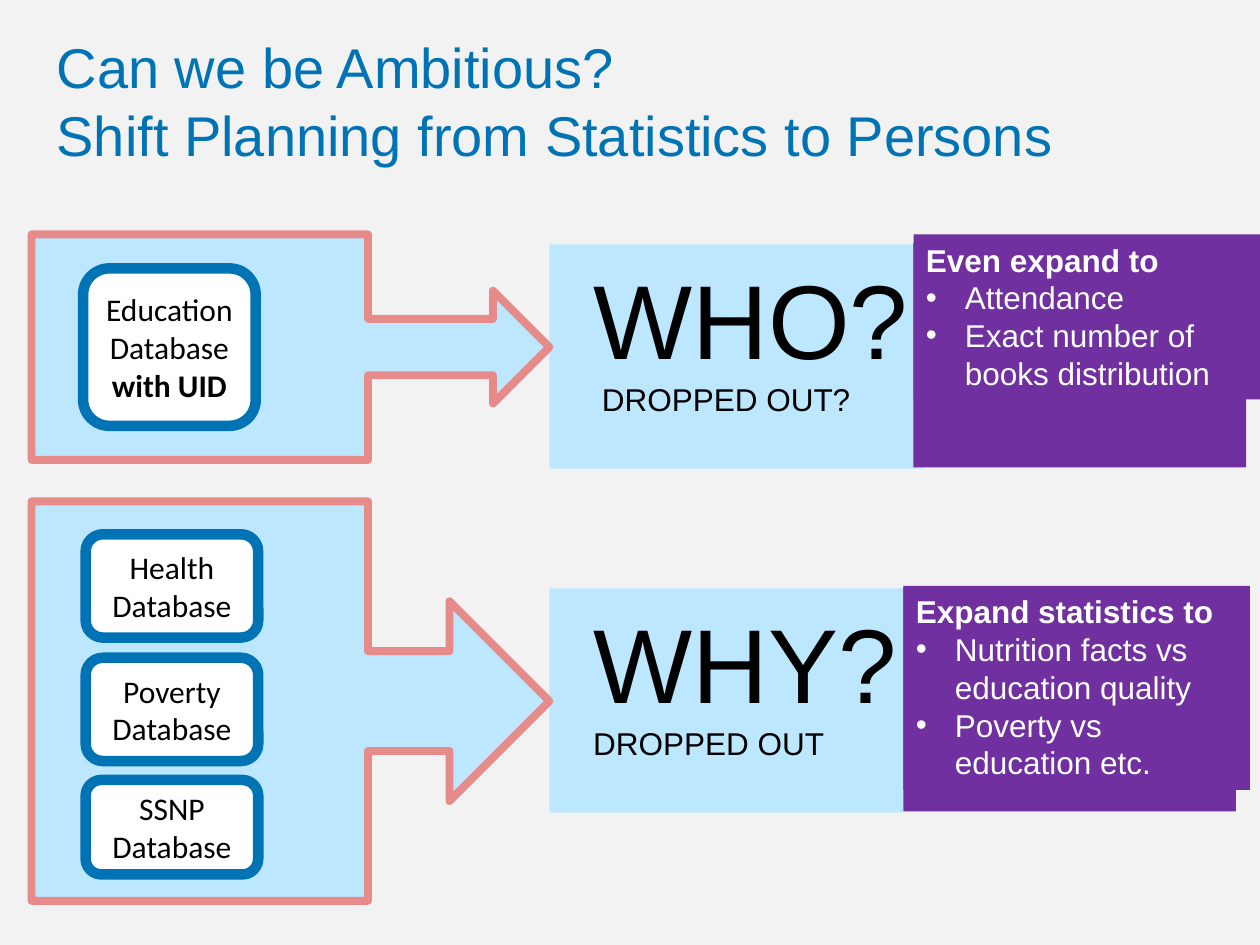
from pptx import Presentation
from pptx.dml.color import RGBColor
from pptx.enum.shapes import MSO_SHAPE
from pptx.enum.text import MSO_ANCHOR, MSO_AUTO_SIZE, PP_ALIGN
from pptx.oxml.ns import qn
from pptx.util import Inches, Pt
from lxml.etree import SubElement

COLORS = {
    "back": "F2F2F2",
    "blue": "0073B5",
    "pale": "BDE7FF",
    "pink": "E68B89",
    "purple": "7030A0",
    "white": "FFFFFF",
    "black": "000000",
}


def rgb(name):
    return RGBColor.from_string(COLORS[name])


def write(para, text, size=18, font="Arial", color="black", bold=False, align=PP_ALIGN.LEFT):
    para.alignment = align
    run = para.add_run()
    run.text = text
    run.font.size = Pt(size)
    run.font.name = font
    run.font.bold = bold
    run.font.color.rgb = rgb(color)


def add_bullet(para):
    props = para._p.get_or_add_pPr()
    props.set("marL", str(Inches(0.31)))
    props.set("indent", str(-Inches(0.31)))
    SubElement(props, qn("a:buFont")).set("typeface", "Arial")
    SubElement(props, qn("a:buChar")).set("char", "•")


class Deck:
    def __init__(self):
        self.show = Presentation()
        self.show.slide_width = Inches(10)
        self.show.slide_height = Inches(7.5)
        self.slide = self.show.slides.add_slide(self.show.slide_layouts[5])
        fill = self.slide.background.fill
        fill.solid()
        fill.fore_color.rgb = rgb("back")

    def title(self, lines, left, top, width, height):
        box = self.slide.shapes.title
        box.left, box.top = Inches(left), Inches(top)
        box.width, box.height = Inches(width), Inches(height)
        frame = box.text_frame
        frame.vertical_anchor = MSO_ANCHOR.MIDDLE
        para = frame.paragraphs[0]
        for i, line in enumerate(lines):
            if i:
                para.add_line_break()
            write(para, line, size=32, color="blue")

    def shape(self, kind, place, fill, line=None, weight=0, home=None):
        shapes = (home or self.slide).shapes
        item = shapes.add_shape(kind, *map(Inches, place))
        item.shadow.inherit = False
        item.fill.solid()
        item.fill.fore_color.rgb = rgb(fill)
        if line:
            item.line.color.rgb = rgb(line)
            item.line.width = Pt(weight)
        else:
            item.line.fill.background()
        return item

    def panel(self, *place):
        self.shape(MSO_SHAPE.RECTANGLE, place, "pale")

    def callout(self, left, top, width, height):
        place = (left + (width - height) / 2, top + (height - width) / 2, height, width)
        item = self.shape(MSO_SHAPE.UP_ARROW_CALLOUT, place, "pale", "pink", 4.5)
        item.rotation = 90

    def text(self, paras, *place):
        frame = self.slide.shapes.add_textbox(*map(Inches, place)).text_frame
        frame.word_wrap = True
        frame.auto_size = MSO_AUTO_SIZE.SHAPE_TO_FIT_TEXT
        for i, runs in enumerate(paras):
            para = frame.add_paragraph() if i else frame.paragraphs[0]
            for text, size in runs:
                write(para, text, size=size)

    def store(self, text, *place, strong=None):
        item = self.shape(MSO_SHAPE.ROUNDED_RECTANGLE, place, "white", "blue", 6)
        frame = item.text_frame
        frame.vertical_anchor = MSO_ANCHOR.MIDDLE
        para = frame.paragraphs[0]
        write(para, text, font="Calibri", align=PP_ALIGN.CENTER)
        if strong:
            write(para, strong, font="Calibri", bold=True, align=PP_ALIGN.CENTER)

    def note(self, head, items, back, front):
        group = self.slide.shapes.add_group_shape()
        self.shape(MSO_SHAPE.RECTANGLE, back, "purple", home=group)
        box = self.shape(MSO_SHAPE.RECTANGLE, front, "purple", home=group)
        frame = box.text_frame
        frame.vertical_anchor = MSO_ANCHOR.TOP
        frame.auto_size = MSO_AUTO_SIZE.SHAPE_TO_FIT_TEXT
        write(frame.paragraphs[0], head, color="white", bold=True)
        for item in items:
            para = frame.add_paragraph()
            add_bullet(para)
            write(para, item, color="white")


def main():
    deck = Deck()
    deck.title(
        ["Can we be Ambitious?", "Shift Planning from Statistics to Persons"],
        0.35, 0.17, 8.84, 1.25,
    )
    deck.panel(4.36, 4.67, 2.81, 1.78)
    deck.panel(4.36, 1.94, 2.97, 1.78)
    for top, height in ((1.86, 1.79), (3.98, 3.17)):
        deck.callout(0.25, top, 4.11, height)
    deck.text([[("WHO? ", 60), (" DROPPED OUT?", 18)]], 4.61, 1.97, 2.73, 1.45)
    deck.text([[("WHY?", 60), (" ", 18)], [("DROPPED OUT", 18)]], 4.61, 4.7, 2.85, 1.45)
    for name, top, height in (("Poverty", 5.22, 0.82), ("Health", 4.24, 0.82), ("SSNP", 6.19, 0.75)):
        deck.store(f"{name} Database", 0.68, top, 1.37, height)
    deck.store("Education Database ", 0.66, 2.13, 1.37, 1.25, strong="with UID")
    deck.note(
        "Even expand to",
        ["Attendance", "Exact number of books distribution"],
        (7.25, 1.93, 2.64, 1.78),
        (7.25, 1.86, 2.75, 1.31),
    )
    deck.note(
        "Expand statistics to",
        ["Nutrition facts vs education quality", "Poverty vs education etc."],
        (7.17, 4.66, 2.64, 1.78),
        (7.17, 4.65, 2.75, 1.62),
    )
    deck.show.save("out.pptx")


if __name__ == "__main__":
    main()
